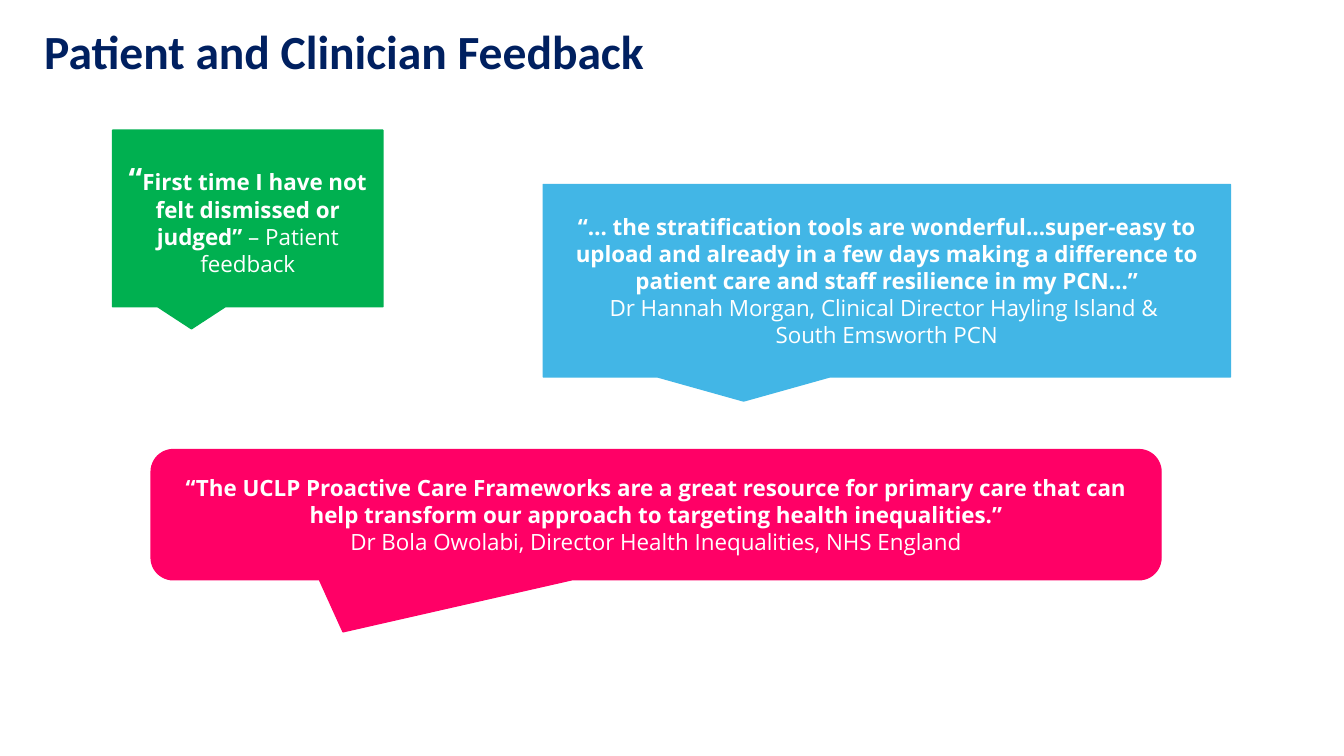
from dataclasses import dataclass

from pptx import Presentation, util as u
from pptx.dml.color import RGBColor
from pptx.enum import shapes, text


@dataclass(frozen=True)
class Theme:
    """Colours, fonts and type sizes of the slide."""
    navy: str = "002060"
    green: str = "00B050"
    blue: str = "42B6E6"
    pink: str = "FF0066"
    white: str = "FFFFFF"
    title_font: str = "Calibri"
    quote_font: str = "Open Sans"
    title_size: int = 34
    mark_size: int = 22
    quote_size: int = 16


class FeedbackSlide:
    """Holds the theme and the current slide, and adds its elements."""

    def __init__(self, deck, theme):
        self.theme = theme
        self.page = deck.slides.add_slide(deck.slide_layouts[5])

    def place(self, shape, bounds):
        for name, value in zip(("left", "top", "width", "height"), bounds):
            setattr(shape, name, u.Cm(value))

    def add_span(self, para, words, size, font, color, bold=True):
        span = para.add_run()
        span.text = words
        for name, value in {"size": u.Pt(size), "name": font, "bold": bold}.items():
            setattr(span.font, name, value)
        span.font.color.rgb = RGBColor.from_string(color)

    def title(self, words, bounds):
        box = self.page.shapes.title
        self.place(box, bounds)
        frame = box.text_frame
        for name, value in {"word_wrap": True, "auto_size": text.MSO_AUTO_SIZE.NONE,
                            "vertical_anchor": text.MSO_ANCHOR.TOP}.items():
            setattr(frame, name, value)
        para = frame.paragraphs[0]
        para.alignment = text.PP_ALIGN.LEFT
        self.add_span(para, words, self.theme.title_size, self.theme.title_font, self.theme.navy)

    def callout(self, kind, bounds, color, lines, tail=()):
        box = self.page.shapes.add_shape(kind, *map(u.Cm, bounds))
        for index, value in enumerate(tail):
            box.adjustments[index] = value
        box.shadow.inherit = False
        box.fill.solid()
        box.fill.fore_color.rgb = box.line.color.rgb = RGBColor.from_string(color)
        box.line.width = u.Pt(1)
        frame = box.text_frame
        frame.word_wrap = True
        frame.vertical_anchor = text.MSO_ANCHOR.MIDDLE
        for index, spans in enumerate(lines):
            para = frame.add_paragraph() if index else frame.paragraphs[0]
            para.alignment = text.PP_ALIGN.CENTER
            for words, size, bold in spans:
                self.add_span(para, words, size, self.theme.quote_font, self.theme.white, bold)


def main():
    theme = Theme()
    size = theme.quote_size
    deck = Presentation()
    deck.slide_width, deck.slide_height = u.Cm(33.87), u.Cm(19.05)
    slide = FeedbackSlide(deck, theme)
    slide.title("Patient and Clinician Feedback", (0.86, 0.43, 26.31, 1.7))

    square = shapes.MSO_SHAPE.RECTANGULAR_CALLOUT
    rounded = shapes.MSO_SHAPE.ROUNDED_RECTANGULAR_CALLOUT
    slide.callout(square, (2.84, 3.28, 6.81, 4.45), theme.green, [
        [("“", theme.mark_size, True),
         ("First time I have not felt dismissed or judged” ", size, True),
         ("– Patient feedback", size, False)],
    ])
    slide.callout(square, (13.69, 4.65, 17.32, 4.85), theme.blue, [
        [("“… the stratification tools are wonderful…super-easy to upload and already "
          "in a few days making a difference to patient care and staff resilience "
          "in my PCN…”", size, True)],
        [("Dr Hannah Morgan, Clinical Director Hayling Island & ", size, False)],
        [("South Emsworth PCN", size, False)],
    ])
    slide.callout(rounded, (3.81, 11.33, 25.45, 3.28), theme.pink, [
        [("“The UCLP Proactive Care Frameworks are a great resource for primary care "
          "that can help transform our approach to targeting health inequalities.”",
          size, True)],
        [("Dr Bola Owolabi, Director Health Inequalities, NHS England", size, False)],
    ], tail=(-0.31, 0.9, 0.17))
    deck.save("out.pptx")


if __name__ == "__main__":
    main()
